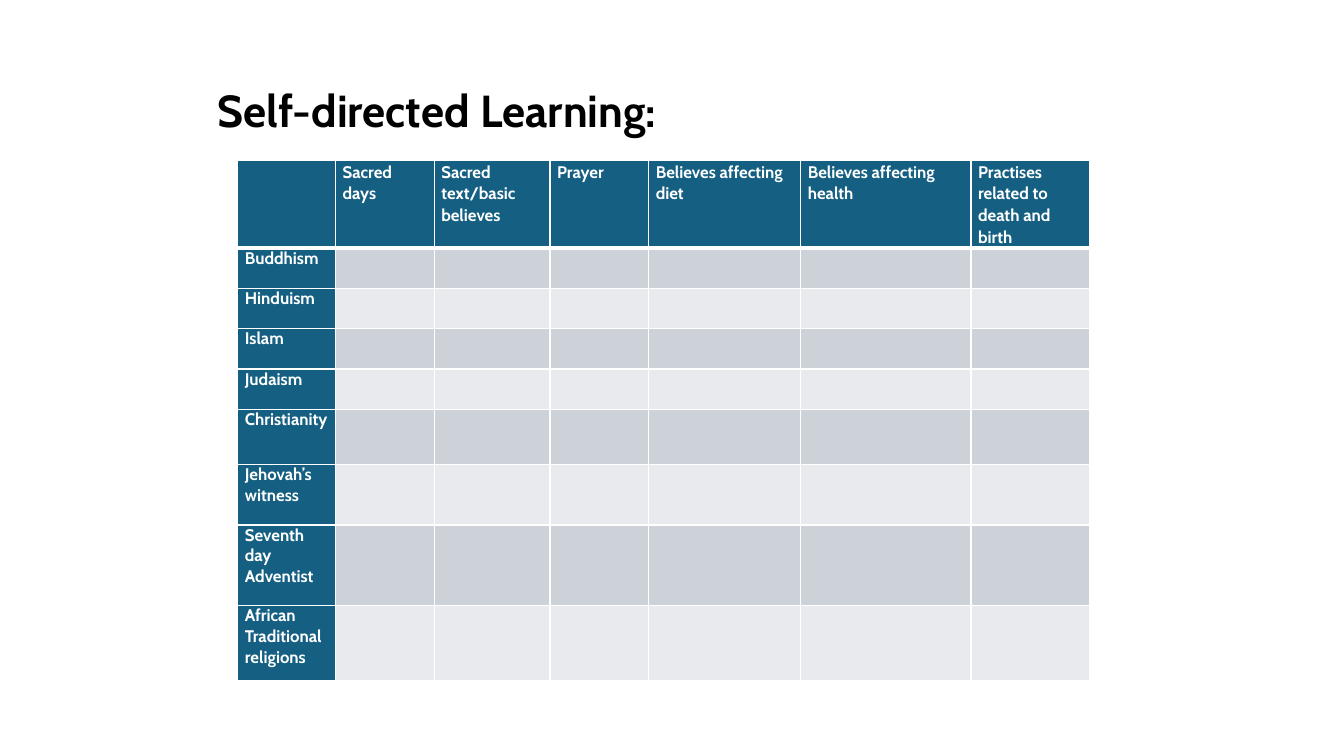
import lxml.etree
import pptx
import pptx.dml.color
import pptx.enum.text
import pptx.oxml.ns
import pptx.util

BLACK = pptx.dml.color.RGBColor(0x00, 0x00, 0x00)
WHITE = pptx.dml.color.RGBColor(0xFF, 0xFF, 0xFF)
TEAL = pptx.dml.color.RGBColor(0x15, 0x60, 0x82)
DARK_BAND = pptx.dml.color.RGBColor(0xCC, 0xD2, 0xD8)
LIGHT_BAND = pptx.dml.color.RGBColor(0xE8, 0xEA, 0xED)

SLIDE_WIDTH = pptx.util.Inches(13.33)
SLIDE_HEIGHT = pptx.util.Inches(7.5)
TITLE_BOX = (15.45, 10.27, 59.56, 12.53)
TABLE_BOX = (17.7, 21.2, 63.4, 68.4)

TOPICS = [
    ("", 0.97),
    ("Sacred days", 0.98),
    ("Sacred text/basic believes", 1.15),
    ("Prayer", 0.98),
    ("Believes affecting diet", 1.51),
    ("Believes affecting health", 1.69),
    ("Practises related to death and birth", 1.18),
]
HEADER_WEIGHT = 0.84
RELIGIONS = [
    ("Buddhism", 0.4),
    ("Hinduism", 0.4),
    ("Islam", 0.4),
    ("Judaism", 0.4),
    ("Christianity", 0.55),
    ("Jehovah’s witness", 0.6),
    ("Seventh day Adventist", 0.8),
    ("African Traditional religions", 0.74),
]


def to_lengths(box):
    """Turn percentages of the slide into left, top, width and height."""
    sides = (SLIDE_WIDTH, SLIDE_HEIGHT) * 2
    return [int(side * share / 100) for share, side in zip(box, sides)]


def write_text(text_frame, text, size, color, line_spacing=1.0):
    """Write one bold, left-aligned paragraph."""
    text_frame.word_wrap = True
    paragraph = text_frame.paragraphs[0]
    paragraph.alignment = pptx.enum.text.PP_ALIGN.LEFT
    paragraph.line_spacing = line_spacing
    run = paragraph.add_run()
    run.text = text
    run.font.name = "Cabin"
    run.font.size = pptx.util.Pt(size)
    run.font.bold = True
    run.font.color.rgb = color


def set_borders(cell, top, bottom):
    """Draw white borders around a cell, with widths in points."""
    properties = cell._tc.get_or_add_tcPr()
    for side, width in (("L", 1), ("R", 1), ("T", top), ("B", bottom)):
        line = lxml.etree.SubElement(
            properties, pptx.oxml.ns.qn("a:ln" + side), w=str(pptx.util.Pt(width)))
        fill = lxml.etree.SubElement(line, pptx.oxml.ns.qn("a:solidFill"))
        lxml.etree.SubElement(fill, pptx.oxml.ns.qn("a:srgbClr"), val=str(WHITE))


def format_cell(cell, color, top=1, bottom=1):
    """Set the margins, borders and fill of a cell."""
    cell.margin_left = cell.margin_right = pptx.util.Inches(0.07)
    cell.margin_top = cell.margin_bottom = 0
    set_borders(cell, top, bottom)
    cell.fill.solid()
    cell.fill.fore_color.rgb = color


def add_title(slide, box):
    """Place the slide title in its box."""
    title = slide.shapes.title
    title.left, title.top, title.width, title.height = to_lengths(box)
    title.text_frame.vertical_anchor = pptx.enum.text.MSO_ANCHOR.TOP
    title.text_frame.auto_size = pptx.enum.text.MSO_AUTO_SIZE.NONE
    write_text(title.text_frame, "Self-directed Learning:", 32, BLACK)


def share_out(lines, weights, total):
    """Split a length over columns or rows by weight; set their sizes."""
    sizes = [int(total * weight / sum(weights)) for weight in weights]
    for line, size in zip(lines, sizes):
        if hasattr(line, "width"):
            line.width = size
        else:
            line.height = size


def add_religion_table(slide, box):
    """Place the table of religions by topic in its box."""
    left, top, width, height = to_lengths(box)
    table = slide.shapes.add_table(
        len(RELIGIONS) + 1, len(TOPICS), left, top, width, height).table
    share_out(table.columns, [weight for _, weight in TOPICS], width)
    row_weights = [HEADER_WEIGHT] + [weight for _, weight in RELIGIONS]
    share_out(table.rows, row_weights, height)

    for column, (topic, _) in enumerate(TOPICS):
        cell = table.cell(0, column)
        format_cell(cell, TEAL, bottom=3)
        if topic:
            write_text(cell.text_frame, topic, 12, WHITE, line_spacing=1.07)

    for row, (religion, _) in enumerate(RELIGIONS, start=1):
        band = DARK_BAND if row % 2 else LIGHT_BAND
        for column in range(len(TOPICS)):
            format_cell(table.cell(row, column), band if column else TEAL,
                        top=3 if row == 1 else 1)
        write_text(table.cell(row, 0).text_frame, religion, 12, WHITE)


def main():
    """Build and save the slide."""
    presentation = pptx.Presentation()
    presentation.slide_width = SLIDE_WIDTH
    presentation.slide_height = SLIDE_HEIGHT
    slide = presentation.slides.add_slide(presentation.slide_layouts[5])
    add_title(slide, TITLE_BOX)
    add_religion_table(slide, TABLE_BOX)
    presentation.save("out.pptx")


if __name__ == "__main__":
    main()
